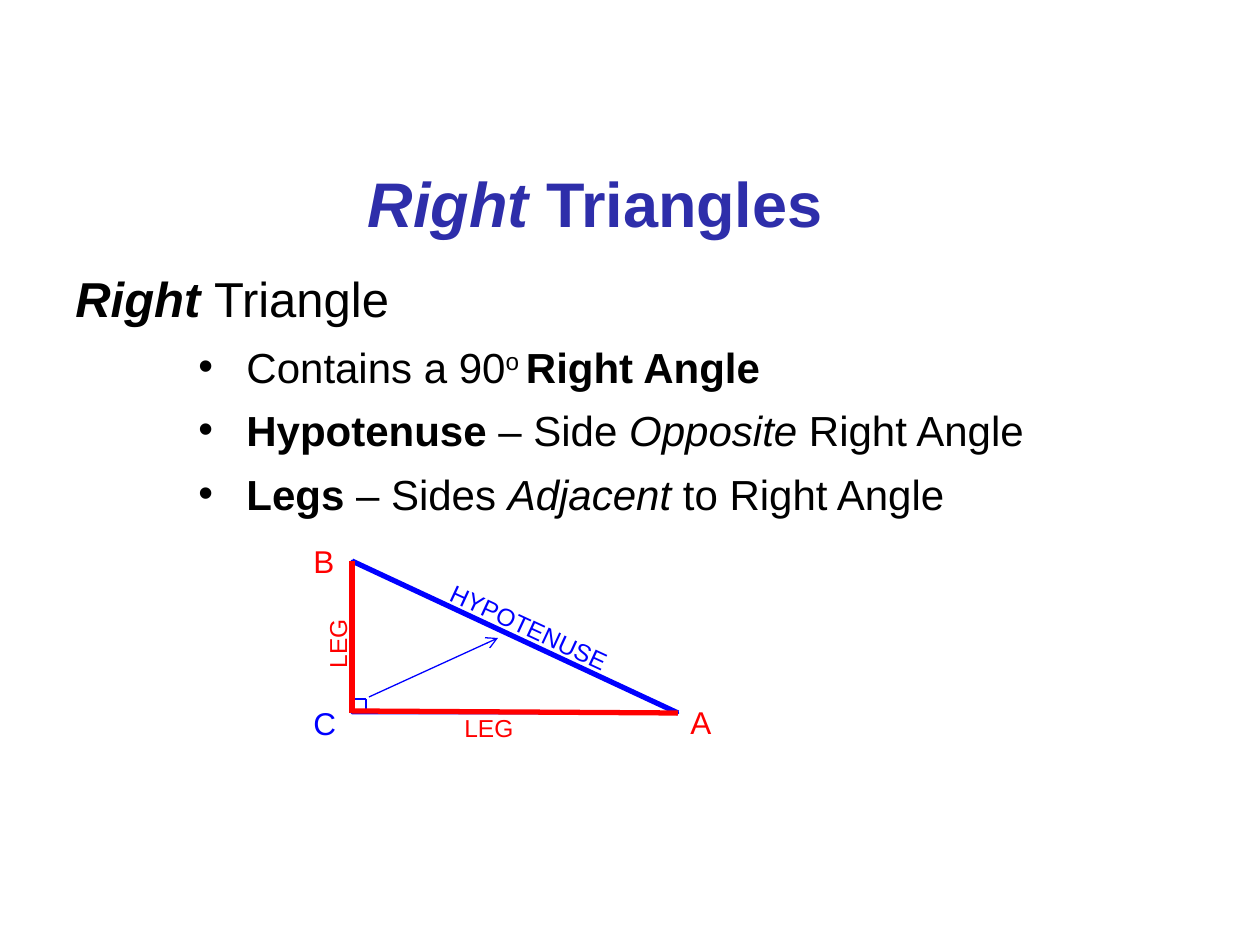
import pptx
import pptx.util
import pptx.dml.color
import pptx.enum.shapes
import pptx.enum.text
import pptx.oxml.ns
import lxml.etree

RGB = pptx.dml.color.RGBColor
NAVY = RGB(0x2E, 0x2E, 0xAA)
BLACK = RGB(0, 0, 0)
BLUE = RGB(0, 0, 255)
RED = RGB(255, 0, 0)
FONT = "Arial"
LEFT, TOP, RIGHT, BASE = 352, 561, 678, 713


def px(n):
    return pptx.util.Emu(round(n * 914400 / 126))


def child(node, tag, **attrs):
    return lxml.etree.SubElement(node, pptx.oxml.ns.qn(tag), attrs)


def add_text(slide, box, runs, size, color, turn=0, wrap=True, bullet=False):
    shape = slide.shapes.add_textbox(*map(px, box))
    shape.rotation = turn
    frame = shape.text_frame
    frame.word_wrap = wrap
    para = frame.paragraphs[0]
    if bullet:
        props = para._p.get_or_add_pPr()
        props.set("marL", str(px(48)))
        props.set("indent", str(px(-48)))
        child(props, "a:buFont", typeface=FONT)
        child(props, "a:buChar", char="•")
    for words, style in runs:
        run = para.add_run()
        run.text = words
        font = run.font
        font.name = FONT
        font.size = pptx.util.Pt(size)
        font.color.rgb = color
        font.bold = "b" in style
        font.italic = "i" in style
        if "^" in style:
            run._r.get_or_add_rPr().set("baseline", "30000")
    return para


def add_line(slide, start, end, color, width, arrow=False):
    kind = pptx.enum.shapes.MSO_CONNECTOR.STRAIGHT
    line = slide.shapes.add_connector(kind, *map(px, start + end))
    line.line.color.rgb = color
    line.line.width = pptx.util.Pt(width)
    if arrow:
        child(line.line._get_or_add_ln(), "a:tailEnd", type="arrow")
    child(line._element.spPr, "a:effectLst")


def add_heads(slide):
    title = [(" ", "b"), ("Right", "bi"), (" Triangles", "b")]
    para = add_text(slide, (335, 158, 503, 89), title, 36, NAVY, wrap=False)
    para.alignment = pptx.enum.text.PP_ALIGN.CENTER
    topic = [("Right ", "bi"), ("Triangle", "")]
    add_text(slide, (63, 262, 927, 72), topic, 28, BLACK)


def add_facts(slide):
    facts = [
        (651, [("Contains a 90", ""), ("o ", "^"), ("Right Angle", "b")]),
        (892, [("Hypotenuse", "b"), (" – Side ", ""),
               ("Opposite", "i"), (" Right Angle", "")]),
        (892, [("Legs ", "b"), ("– Sides ", ""),
               ("Adjacent", "i"), (" to Right Angle", "")]),
    ]
    for i, (width, runs) in enumerate(facts):
        box = (186, 335 + i * 127 // 2, width, 63)
        add_text(slide, box, runs, 24, BLACK, bullet=True)


def add_shape(slide):
    kind = pptx.enum.shapes.MSO_SHAPE.ISOSCELES_TRIANGLE
    box = (LEFT, TOP, RIGHT - LEFT, BASE - TOP)
    shape = slide.shapes.add_shape(kind, *map(px, box))
    shape.adjustments[0] = 0
    shape.shadow.inherit = False
    shape.fill.background()
    shape.line.color.rgb = BLUE
    shape.line.width = pptx.util.Pt(1.5)


def add_labels(slide):
    points = [("C", 301, 698, BLUE), ("B", 301, 536, RED), ("A", RIGHT, 697, RED)]
    for name, x, y, color in points:
        add_text(slide, (x, y, 50, 50), [(name, "")], 18, color)
    sides = [
        ("HYPOTENUSE", 431, 610, 213, BLUE, 24.9),
        ("LEG", 295, 616, 86, RED, 270),
        ("LEG", 452, 707, 86, RED, 0),
    ]
    for name, x, y, width, color, turn in sides:
        add_text(slide, (x, y, width, 43), [(name, "")], 14, color, turn)


def add_sides(slide):
    edge = 14
    inner = (LEFT + edge, BASE - edge)
    add_line(slide, (LEFT, BASE - edge), inner, BLUE, 1)
    add_line(slide, inner, (LEFT + edge, BASE), BLUE, 1)
    add_line(slide, (369, 697), (498, 638), BLUE, 0.75, arrow=True)
    add_line(slide, (LEFT, TOP), (RIGHT, BASE), BLUE, 3)
    add_line(slide, (LEFT, TOP), (LEFT, BASE), RED, 3)
    add_line(slide, (RIGHT, BASE), (LEFT, BASE - 2), RED, 3)


def main():
    deck = pptx.Presentation()
    deck.slide_width = px(1260)
    deck.slide_height = px(945)
    slide = deck.slides.add_slide(deck.slide_layouts[6])
    add_heads(slide)
    add_facts(slide)
    add_shape(slide)
    add_labels(slide)
    add_sides(slide)
    deck.save("out.pptx")


if __name__ == "__main__":
    main()
